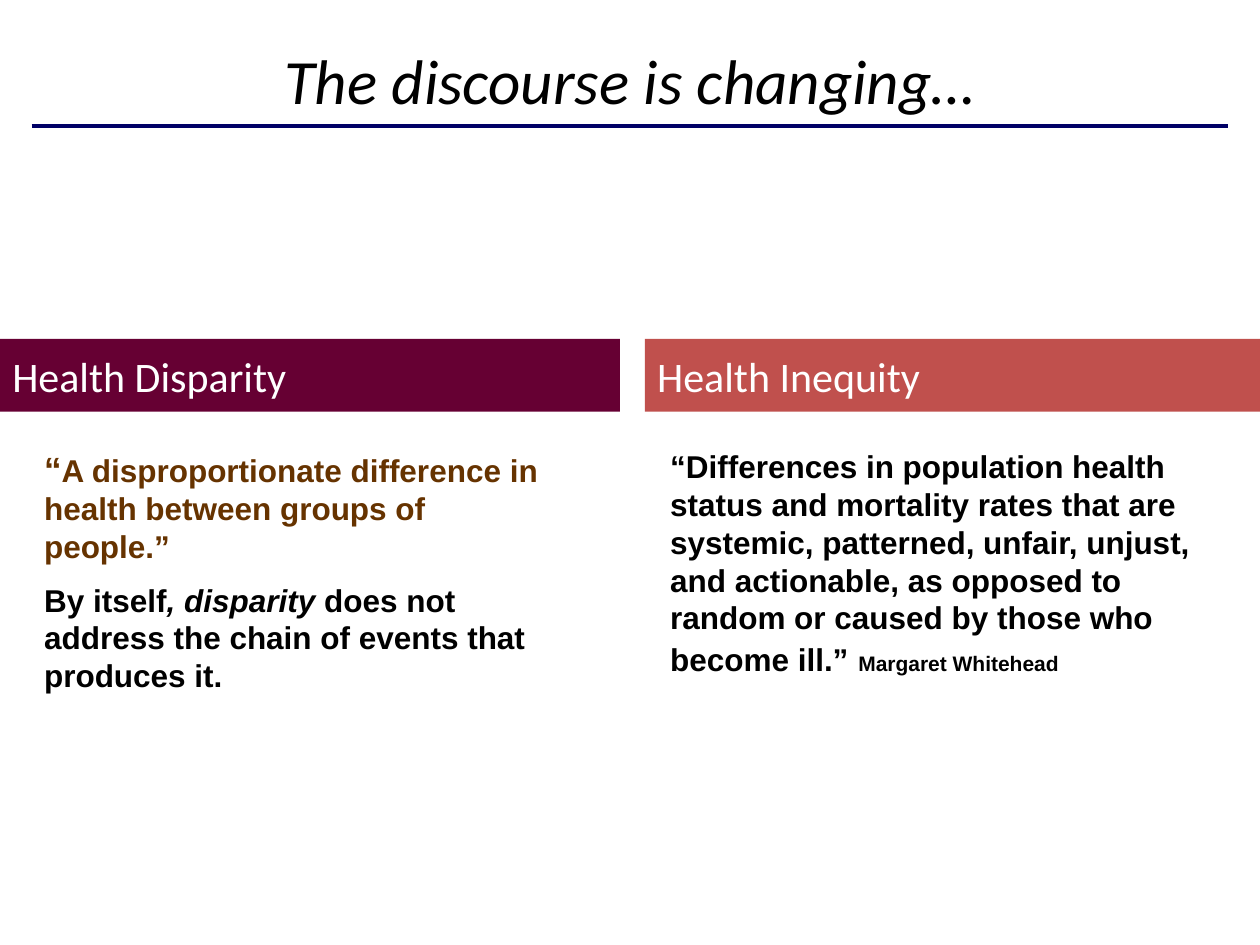
from lxml.etree import SubElement
from pptx import Presentation
from pptx.dml.color import RGBColor
from pptx.enum.shapes import MSO_CONNECTOR, MSO_SHAPE
from pptx.enum.text import MSO_ANCHOR, MSO_AUTO_SIZE, PP_ALIGN
from pptx.oxml.ns import qn
from pptx.util import Cm, Pt

BLACK = RGBColor(0x00, 0x00, 0x00)
WHITE = RGBColor(0xFF, 0xFF, 0xFF)
NAVY = RGBColor(0x00, 0x00, 0x66)
PLUM = RGBColor(0x66, 0x00, 0x33)
BRICK = RGBColor(0xC0, 0x50, 0x4D)
BROWN = RGBColor(0x66, 0x33, 0x00)


def add_run(para, text, size, color, font="Arial", bold=False, italic=False):
    """Append one styled run to a paragraph."""
    run = para.add_run()
    run.text = text
    run.font.name = font
    run.font.size = Pt(size)
    run.font.bold = bold
    run.font.italic = italic
    run.font.color.rgb = color


def add_title(slide, left, top, width, height, text):
    """Place the centred title and the rule under it."""
    box = slide.shapes.add_textbox(
        Cm(left + 0.63), Cm(top), Cm(width - 1.26), Cm(height))
    frame = box.text_frame
    frame.word_wrap = True
    frame.vertical_anchor = MSO_ANCHOR.MIDDLE
    para = frame.paragraphs[0]
    para.alignment = PP_ALIGN.CENTER
    add_run(para, text, 36, BLACK, "Calibri", italic=True)
    level = Cm(top + 2.11)
    rule = slide.shapes.add_connector(
        MSO_CONNECTOR.STRAIGHT, Cm(left), level, Cm(left + width), level)
    rule.line.color.rgb = NAVY
    rule.line.width = Pt(2.25)
    SubElement(rule.element.spPr, qn("a:effectLst"))


def add_panel(slide, left, top, width, head, fill, inset, size, paras):
    """Place a heading bar and the quoted text below it."""
    bar = slide.shapes.add_shape(
        MSO_SHAPE.RECTANGLE, Cm(left), Cm(top), Cm(width), Cm(1.47))
    bar.shadow.inherit = False
    bar.fill.solid()
    bar.fill.fore_color.rgb = fill
    bar.line.fill.background()
    frame = bar.text_frame
    frame.word_wrap = False
    frame.vertical_anchor = MSO_ANCHOR.MIDDLE
    frame.paragraphs[0].alignment = PP_ALIGN.LEFT
    add_run(frame.paragraphs[0], head, 24, WHITE, "Calibri")

    wide, high = size
    box = slide.shapes.add_textbox(
        Cm(left + inset), Cm(top + 2.06), Cm(wide), Cm(high))
    frame = box.text_frame
    frame.word_wrap = True
    frame.auto_size = MSO_AUTO_SIZE.SHAPE_TO_FIT_TEXT
    for index, runs in enumerate(paras):
        para = frame.add_paragraph() if index else frame.paragraphs[0]
        para.space_before = Pt(9 if index else 2)
        for text, points, color, italic in runs:
            add_run(para, text, points, color, bold=True, italic=italic)


def main():
    """Build the slide and save it."""
    deck = Presentation()
    deck.slide_width, deck.slide_height = Cm(25.4), Cm(19.05)
    slide = deck.slides.add_slide(deck.slide_layouts[6])
    add_title(slide, 0.64, 0.43, 24.12, 2.34, "The discourse is changing…")
    add_panel(slide, 0, 6.83, 12.5, "Health Disparity", PLUM, 0.64, (10.59, 5.31), [
        [("“", 20, BROWN, False),
         ("A disproportionate difference in health between groups of people.”",
          18, BROWN, False)],
        [("By itself", 18, BLACK, False),
         (", disparity ", 18, BLACK, True),
         ("does not address the chain of events that produces it.",
          18, BLACK, False)],
    ])
    add_panel(slide, 13, 6.83, 12.5, "Health Inequity", BRICK, 0.26, (11.43, 4.93), [
        [("“Differences in population health status and mortality rates that "
          "are systemic, patterned, unfair, unjust, and actionable, as opposed "
          "to random or caused by those who become ill.”", 18, BLACK, False),
         (" ", 20, BLACK, False),
         ("Margaret Whitehead", 12, BLACK, False)],
    ])
    deck.save("out.pptx")


if __name__ == "__main__":
    main()
